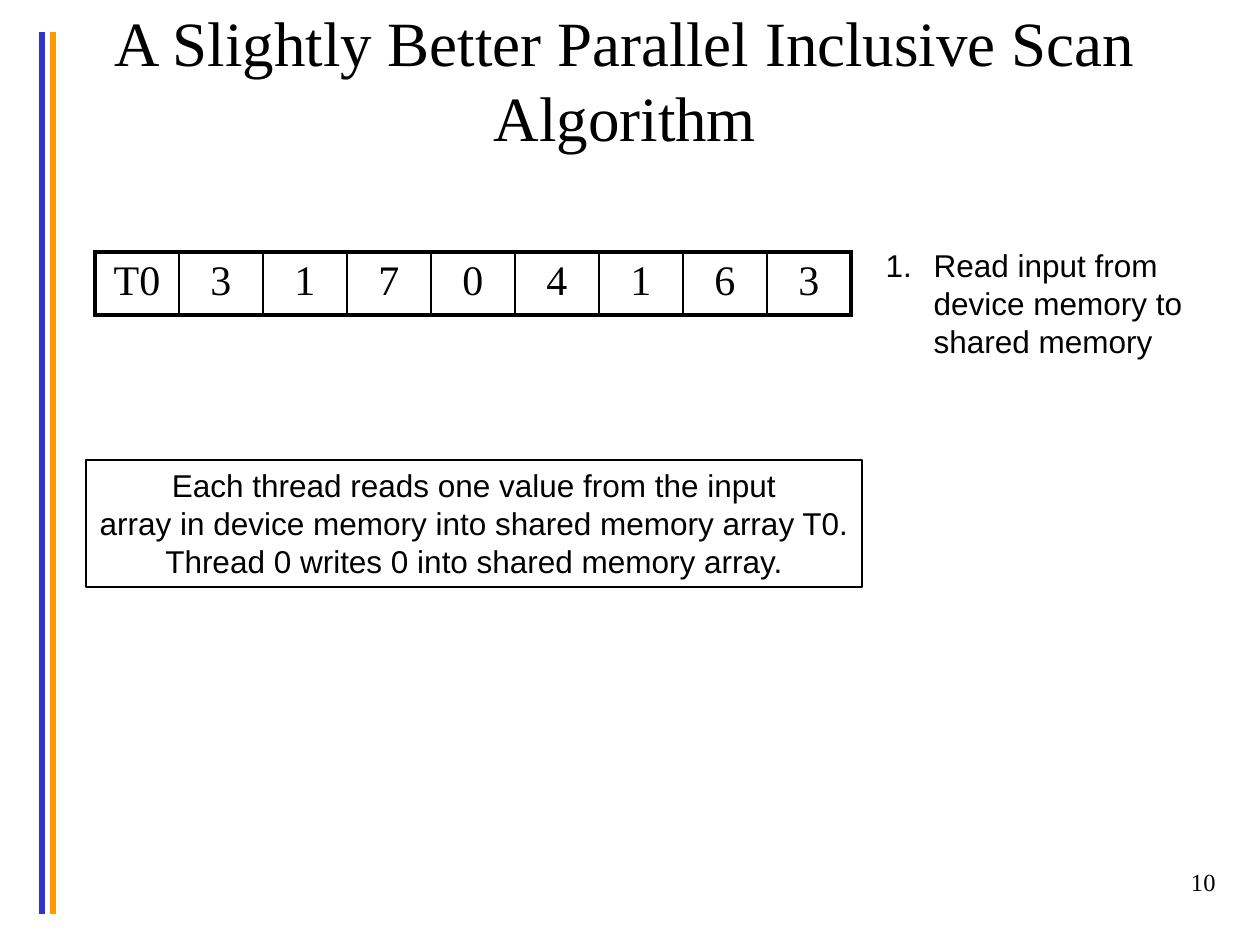
import dataclasses

import lxml.etree
import pptx
import pptx.dml.color
import pptx.enum.shapes
import pptx.enum.text
import pptx.oxml.ns
import pptx.util

EMU_PER_PIXEL = 914400 / 126
ALIGN = pptx.enum.text.PP_ALIGN
ANCHOR = pptx.enum.text.MSO_ANCHOR


@dataclasses.dataclass(frozen=True)
class Theme:
    text: str = "000000"
    left_bar: str = "3333CC"
    right_bar: str = "FF9900"
    serif: str = "Times New Roman"
    sans: str = "Arial"
    title_size: int = 36
    array_size: int = 24
    body_size: int = 18
    number_size: int = 14
    bar_width: int = 3
    box_line: float = 0.75
    inner_border: float = 1
    outer_border: float = 2.25


THEME = Theme()


def px(length):
    return pptx.util.Emu(round(length * EMU_PER_PIXEL))


def color(value):
    return pptx.dml.color.RGBColor.from_string(value)


def place(shape, left, top, width, height):
    shape.left, shape.top = px(left), px(top)
    shape.width, shape.height = px(width), px(height)


def write(frame, text, font_name, size, alignment, anchor=ANCHOR.TOP, wrap=True):
    frame.text = text
    frame.auto_size = pptx.enum.text.MSO_AUTO_SIZE.NONE
    frame.vertical_anchor = anchor
    frame.word_wrap = wrap
    for paragraph in frame.paragraphs:
        format_paragraph(paragraph, font_name, size, alignment)


def format_paragraph(paragraph, font_name, size, alignment):
    paragraph.alignment = alignment
    paragraph.space_before = pptx.util.Pt(0)
    paragraph.font.name = font_name
    paragraph.font.size = pptx.util.Pt(size)
    paragraph.font.color.rgb = color(THEME.text)


def add_bar(slide, x, bar_color):
    bar = slide.shapes.add_connector(
        pptx.enum.shapes.MSO_CONNECTOR.STRAIGHT, px(x), px(32), px(x), px(914)
    )
    bar.line.color.rgb = color(bar_color)
    bar.line.width = pptx.util.Pt(THEME.bar_width)
    properties = bar._element.spPr
    lxml.etree.SubElement(properties, pptx.oxml.ns.qn("a:effectLst"))


def set_title(slide, text):
    title = slide.shapes.title
    place(title, 53, 0, 1144, 158)
    write(title.text_frame, text, THEME.serif, THEME.title_size, ALIGN.CENTER, ANCHOR.MIDDLE)


def set_steps(slide, text):
    body = slide.placeholders[1]
    place(body, 873, 240, 387, 165)
    write(body.text_frame, text, THEME.sans, THEME.body_size, ALIGN.LEFT)
    for paragraph in body.text_frame.paragraphs:
        properties = paragraph._p.get_or_add_pPr()
        properties.set("marL", str(px(48)))
        properties.set("indent", str(px(-48)))
        numbering = lxml.etree.SubElement(properties, pptx.oxml.ns.qn("a:buAutoNum"))
        numbering.set("type", "arabicPeriod")
        properties.insert_element_before(numbering, "a:tabLst", "a:defRPr", "a:extLst")


def add_note_box(slide, text):
    box = slide.shapes.add_shape(
        pptx.enum.shapes.MSO_SHAPE.RECTANGLE, px(86), px(460), px(776), px(127)
    )
    box.shadow.inherit = False
    box.fill.background()
    box.line.color.rgb = color(THEME.text)
    box.line.width = pptx.util.Pt(THEME.box_line)
    write(box.text_frame, text, THEME.sans, THEME.body_size, ALIGN.CENTER, wrap=False)


def add_page_number(slide, text):
    box = slide.shapes.add_textbox(px(966), px(861), px(262), px(63))
    write(box.text_frame, text, THEME.serif, THEME.number_size, ALIGN.RIGHT)


def add_border(cell, side, width):
    properties = cell._tc.get_or_add_tcPr()
    line = lxml.etree.SubElement(properties, pptx.oxml.ns.qn(f"a:ln{side}"))
    line.set("w", str(pptx.util.Pt(width)))
    fill = lxml.etree.SubElement(line, pptx.oxml.ns.qn("a:solidFill"))
    lxml.etree.SubElement(fill, pptx.oxml.ns.qn("a:srgbClr")).set("val", THEME.text)


def add_array(slide, values):
    column_width = 84
    height = 63
    table = slide.shapes.add_table(
        1, len(values), px(95), px(252), px(column_width * len(values)), px(height)
    ).table
    table.first_row = False
    table.horz_banding = False
    last = len(values) - 1
    for index, value in enumerate(values):
        table.columns[index].width = px(column_width)
        cell = table.cell(0, index)
        cell.text = value
        format_paragraph(
            cell.text_frame.paragraphs[0], THEME.serif, THEME.array_size, ALIGN.CENTER
        )
        add_border(cell, "L", THEME.outer_border if index == 0 else THEME.inner_border)
        add_border(cell, "R", THEME.outer_border if index == last else THEME.inner_border)
        add_border(cell, "T", THEME.outer_border)
        add_border(cell, "B", THEME.outer_border)
        cell.fill.background()


def main():
    presentation = pptx.Presentation()
    presentation.slide_width = px(1260)
    presentation.slide_height = px(945)
    slide = presentation.slides.add_slide(presentation.slide_layouts[1])
    add_bar(slide, 42, THEME.left_bar)
    add_bar(slide, 53, THEME.right_bar)
    add_page_number(slide, "10")
    set_title(slide, "A Slightly Better Parallel Inclusive Scan Algorithm")
    set_steps(slide, "Read input from\vdevice memory to\vshared memory")
    add_note_box(
        slide,
        "Each thread reads one value from the input\v"
        "array in device memory into shared memory array T0.\n"
        "Thread 0 writes 0 into shared memory array.",
    )
    add_array(slide, ["T0", "3", "1", "7", "0", "4", "1", "6", "3"])
    presentation.save("out.pptx")


if __name__ == "__main__":
    main()
